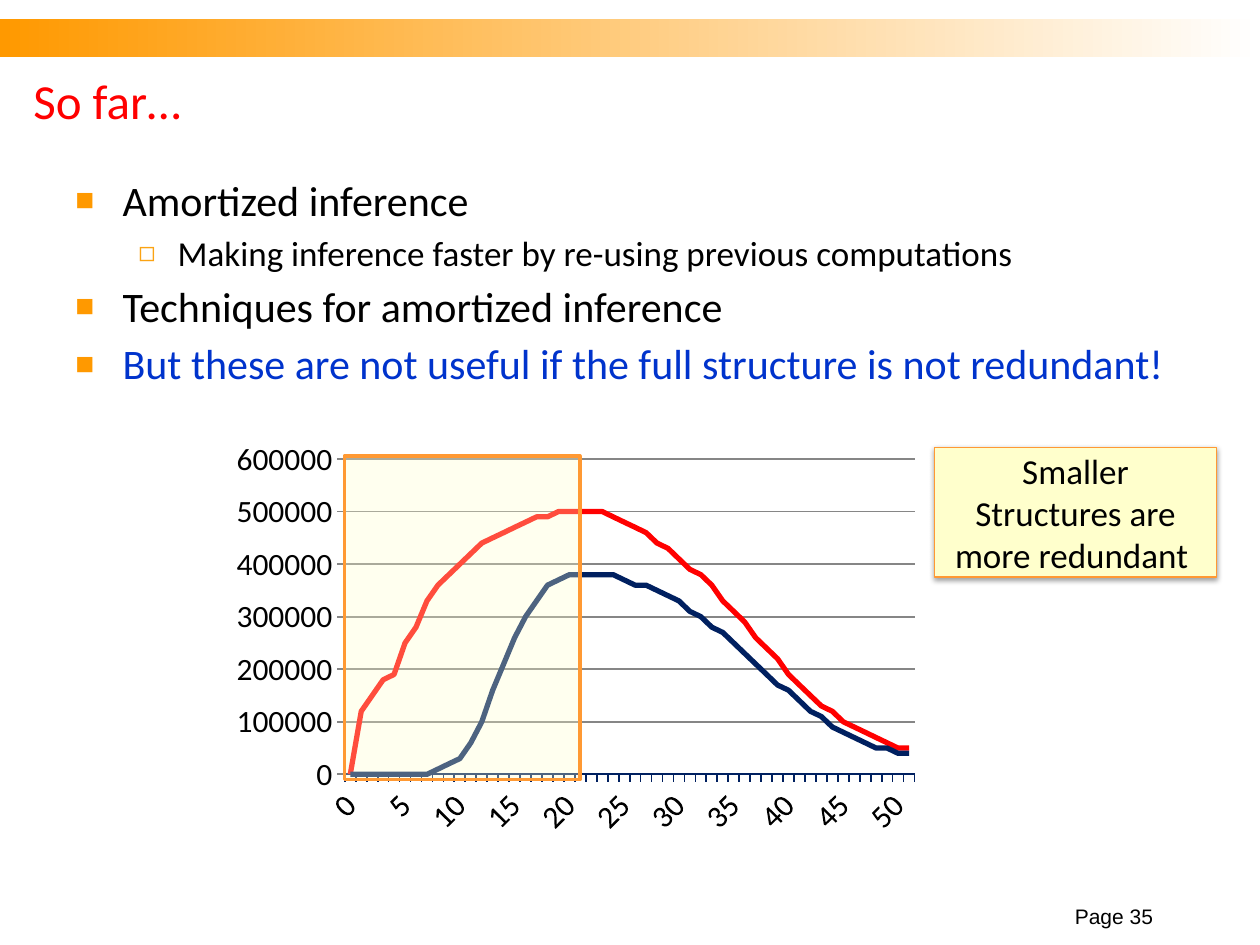
from lxml import etree
from pptx import Presentation
from pptx import util as u
from pptx.chart.data import CategoryChartData
from pptx.dml.color import RGBColor
from pptx.enum import chart as charts, shapes, text
from pptx.oxml import ns

ORANGE = RGBColor(0xFF, 0x99, 0x00)
AMBER = RGBColor(0xFB, 0xA3, 0x13)
EDGE = RGBColor(0xFF, 0x99, 0x33)
CREAM = RGBColor(0xFF, 0xFF, 0xCC)
RED = RGBColor(0xFF, 0x00, 0x00)
NAVY = RGBColor(0x00, 0x20, 0x60)
BLUE = RGBColor(0x00, 0x33, 0xCC)
GREY = RGBColor(0x86, 0x86, 0x86)
BLACK = RGBColor(0x00, 0x00, 0x00)
WHITE = RGBColor(0xFF, 0xFF, 0xFF)

BULLETS = [
    (0, "Amortized inference", BLACK),
    (1, "Making inference faster by re-using previous computations", BLACK),
    (0, "Techniques for amortized inference", BLACK),
    (0, "But these are not useful if the full structure is not redundant!", BLUE),
]
LEVELS = [
    dict(size=24, margin=27, hang=27, mark="■", color=ORANGE, scale=75),
    dict(size=20, margin=58.5, hang=22.5, mark="◻", color=AMBER, scale=80),
]
CATEGORIES = [str(n) for n in range(51)] + ["50"]
UPPER = [0, 120, 150, 180, 190, 250, 280, 330, 360, 380, 400, 420, 440, 450,
         460, 470, 480, 490, 490, 500, 500, 500, 500, 500, 490, 480, 470, 460,
         440, 430, 410, 390, 380, 360, 330, 310, 290, 260, 240, 220, 190, 170,
         150, 130, 120, 100, 90, 80, 70, 60, 50, 50]
LOWER = [0] * 8 + [10, 20, 30, 60, 100, 160, 210, 260, 300, 330, 360, 370, 380,
                   380, 380, 380, 380, 370, 360, 360, 350, 340, 330, 310, 300,
                   280, 270, 250, 230, 210, 190, 170, 160, 140, 120, 110, 90,
                   80, 70, 60, 50, 50, 40, 40]
SERIES = [("Series 1", UPPER, RED), ("Series 2", LOWER, NAVY)]


def add_child(parent, tag, **attributes):
    child = etree.SubElement(parent, ns.qn(tag))
    for name, value in attributes.items():
        child.set(name, str(value))
    return child


class SlideBuilder:
    font = "Calibri"

    def __init__(self, slide):
        self.slide = slide

    def add_span(self, para, words, size, color=BLACK, font=None):
        span = para.add_run()
        span.text = words
        span.font.size = u.Pt(size)
        span.font.name = font or self.font
        span.font.color.rgb = color

    def text_box(self, place, anchor):
        box = self.slide.shapes.add_textbox(*map(u.Pt, place))
        box.text_frame.word_wrap = True
        box.text_frame.vertical_anchor = anchor
        return box.text_frame

    def line(self, place, words, size, color=BLACK, font=None,
             anchor=text.MSO_ANCHOR.MIDDLE, align=text.PP_ALIGN.LEFT):
        para = self.text_box(place, anchor).paragraphs[0]
        para.alignment = align
        self.add_span(para, words, size, color, font)

    def bullets(self, place, items):
        frame = self.text_box(place, text.MSO_ANCHOR.TOP)
        for index, (level, words, color) in enumerate(items):
            style = LEVELS[level]
            para = frame.add_paragraph() if index else frame.paragraphs[0]
            para.level = level
            if index:
                para.space_before = u.Pt(4)
            props = para._p.get_or_add_pPr()
            props.set("marL", str(u.Pt(style["margin"])))
            props.set("indent", str(-u.Pt(style["hang"])))
            add_child(add_child(props, "a:buClr"), "a:srgbClr", val=style["color"])
            add_child(props, "a:buSzPct", val=style["scale"] * 1000)
            add_child(props, "a:buFont", typeface="Arial")
            add_child(props, "a:buChar", char=style["mark"])
            self.add_span(para, words, style["size"], color)

    def rectangle(self, place):
        box = self.slide.shapes.add_shape(shapes.MSO_SHAPE.RECTANGLE, *map(u.Pt, place))
        box.shadow.inherit = False
        return box

    def gradient_bar(self, place, colors):
        box = self.rectangle(place)
        box.fill.gradient()
        box.fill.gradient_angle = 0
        for stop, color in zip(box.fill.gradient_stops, colors):
            stop.color.rgb = color
        box.line.fill.background()

    def panel(self, place, width, opacity=100):
        box = self.rectangle(place)
        box.fill.solid()
        box.fill.fore_color.rgb = CREAM
        box.line.color.rgb = EDGE
        box.line.width = u.Pt(width)
        if opacity < 100:
            tint = box._element.spPr.find(ns.qn("a:solidFill"))[0]
            add_child(tint, "a:alpha", val=opacity * 1000)
        return box

    def callout(self, place, words, size):
        box = self.panel(place, 0.75)
        effects = box._element.spPr.find(ns.qn("a:effectLst"))
        shade = add_child(effects, "a:outerShdw", blurRad=u.Pt(3.1),
                          dist=u.Pt(1.6), dir=5400000, rotWithShape=0)
        add_child(add_child(shade, "a:srgbClr", val=BLACK), "a:alpha", val=38000)
        frame = box.text_frame
        frame.word_wrap = True
        frame.vertical_anchor = text.MSO_ANCHOR.MIDDLE
        frame.paragraphs[0].alignment = text.PP_ALIGN.CENTER
        self.add_span(frame.paragraphs[0], words, size)

    def line_chart(self, place, layout, size):
        data = CategoryChartData(number_format="General")
        data.categories = CATEGORIES
        for name, thousands, _ in SERIES:
            data.add_series(name, [value * 1000 for value in thousands])
        chart = self.slide.shapes.add_chart(
            charts.XL_CHART_TYPE.LINE, *map(u.Pt, place), data).chart
        chart.has_legend = False
        chart.has_title = False
        chart.font.size = u.Pt(size)
        chart.font.name = self.font
        chart.font.color.rgb = BLACK
        plot = chart.plots[0]
        plot.vary_by_categories = False
        for series, (_, _, color) in zip(plot.series, SERIES):
            series.smooth = False
            series.marker.style = charts.XL_MARKER_STYLE.NONE
            series.format.line.color.rgb = color
            series.format.line.width = u.Pt(3)
        self.axes(chart, size)
        self.plot_layout(chart, layout)

    def axes(self, chart, size):
        across, upward = chart.category_axis, chart.value_axis
        upward.minimum_scale, upward.maximum_scale = 0, 600000
        upward.major_unit = 100000
        upward.has_major_gridlines = True
        lines = (across.format.line, NAVY), (upward.format.line, GREY), \
            (upward.major_gridlines.format.line, GREY)
        for line, color in lines:
            line.color.rgb = color
            line.width = u.Pt(1)
        for axis in (across, upward):
            axis.major_tick_mark = charts.XL_TICK_MARK.OUTSIDE
            axis.tick_labels.font.size = u.Pt(size)
            axis.tick_labels.font.name = self.font
            axis.tick_labels.font.color.rgb = BLACK
        element = across._element
        element.find(ns.qn("c:txPr")).find(ns.qn("a:bodyPr")).set("rot", "-2700000")
        last = element.find(ns.qn("c:noMultiLvlLbl"))
        for tag, step in (("c:tickLblSkip", 5), ("c:tickMarkSkip", 1)):
            last.addprevious(add_child(element, tag, val=step))

    def plot_layout(self, chart, fractions):
        area = chart._chartSpace.find(".//" + ns.qn("c:plotArea"))
        for old in area.findall(ns.qn("c:layout")):
            area.remove(old)
        layout = add_child(area, "c:layout")
        area.insert(0, layout)
        manual = add_child(layout, "c:manualLayout")
        add_child(manual, "c:layoutTarget", val="inner")
        for side in "xy":
            add_child(manual, f"c:{side}Mode", val="edge")
        for side, fraction in zip("xywh", fractions):
            add_child(manual, f"c:{side}", val=fraction)


def main():
    deck = Presentation()
    deck.slide_width, deck.slide_height = u.Pt(720), u.Pt(540)
    page = SlideBuilder(deck.slides.add_slide(deck.slide_layouts[6]))
    page.gradient_bar((0, 10.8, 720, 21.6), (ORANGE, WHITE))
    page.line((12, 36, 648, 42), "So far…", 28, RED)
    page.bullets((36, 96, 648, 390), BULLETS)
    page.line_chart((114.5, 216, 458.6, 261.4), (0.18, 0.18, 0.71, 0.7), 18)
    page.panel((196.8, 260.6, 134.6, 185), 2, opacity=30)
    page.callout((534, 255.6, 161.3, 74.2), "Smaller Structures are more redundant ", 20)
    page.line((594, 516, 72, 18), "Page 35", 12, font="Arial",
              anchor=text.MSO_ANCHOR.BOTTOM, align=text.PP_ALIGN.RIGHT)
    deck.save("out.pptx")


if __name__ == "__main__":
    main()
